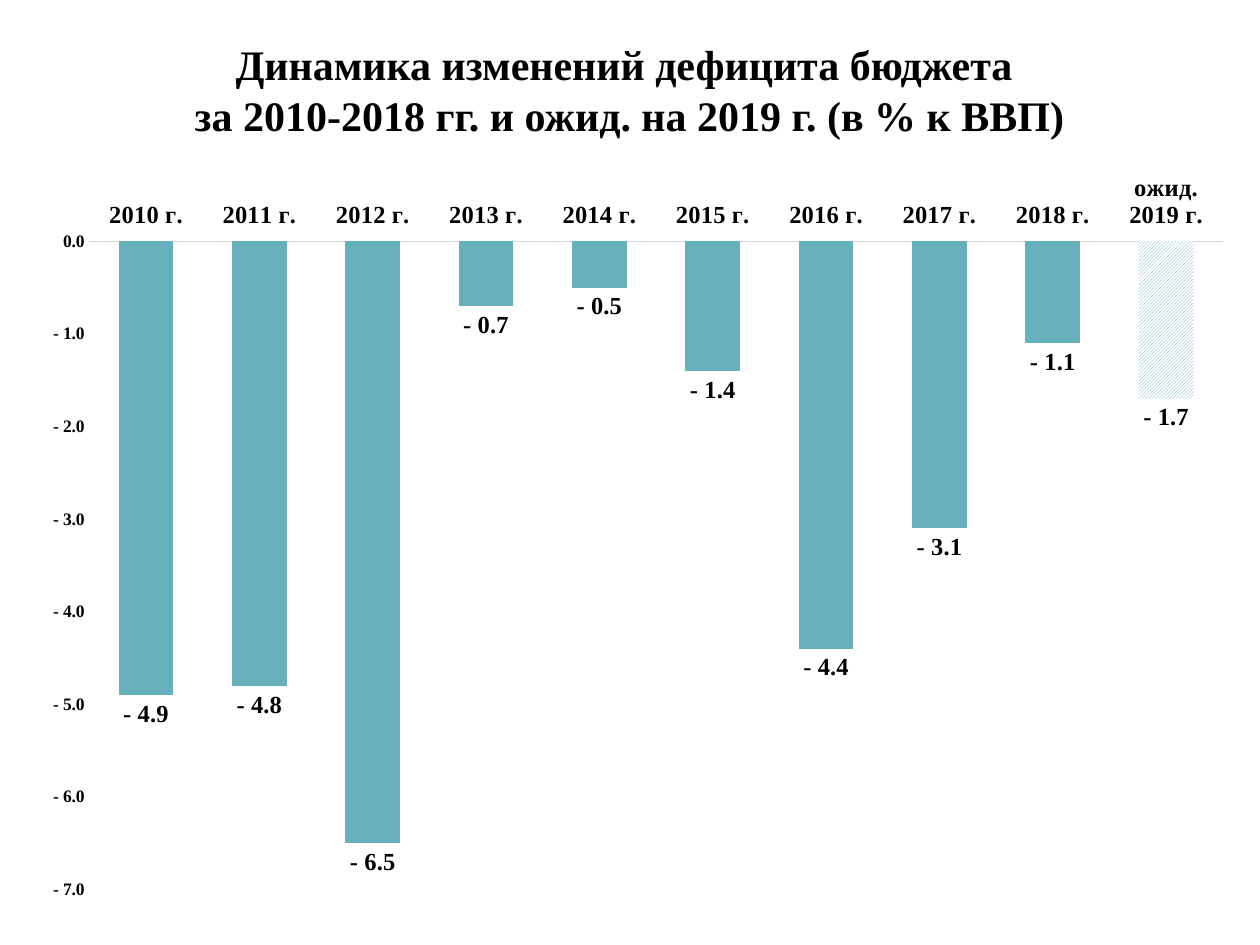
from dataclasses import dataclass

from lxml import etree
from pptx import Presentation
from pptx.chart.data import CategoryChartData
from pptx.dml.color import RGBColor
from pptx.enum.chart import XL_CHART_TYPE, XL_LABEL_POSITION, XL_TICK_LABEL_POSITION, XL_TICK_MARK
from pptx.enum.dml import MSO_PATTERN
from pptx.enum.text import MSO_ANCHOR, MSO_AUTO_SIZE, PP_ALIGN
from pptx.oxml.ns import qn
from pptx.util import Inches, Pt


@dataclass(frozen=True)
class Theme:
    font: str = "Times New Roman"
    text: RGBColor = RGBColor(0, 0, 0)
    bar: RGBColor = RGBColor(0x66, 0xB1, 0xBD)
    background: RGBColor = RGBColor(255, 255, 255)
    axis: RGBColor = RGBColor(0xD9, 0xD9, 0xD9)
    title_size: float = 24
    title_line: float = 29.2
    label_size: float = 14
    scale_size: float = 10
    number_format: str = r"#\ ##0.0"


@dataclass(frozen=True)
class Deficit:
    year: str
    percent: float
    expected: bool = False


THEME = Theme()
TITLE = ["Динамика изменений дефицита бюджета ",
         "за 2010-2018 гг. и ожид. на 2019 г. (в % к ВВП)"]
DEFICITS = [
    Deficit("2010 г.", -4.9), Deficit("2011 г.", -4.8), Deficit("2012 г.", -6.5),
    Deficit("2013 г.", -0.7), Deficit("2014 г.", -0.5), Deficit("2015 г.", -1.4),
    Deficit("2016 г.", -4.4), Deficit("2017 г.", -3.1), Deficit("2018 г.", -1.1),
    Deficit("ожид. 2019 г.", -1.7, expected=True),
]


def style_font(font, size: float) -> None:
    font.name, font.size, font.bold = THEME.font, Pt(size), True
    font.color.rgb = THEME.text


def write_text(text_frame, lines: list[str], *, size: float, line_height: float,
               alignment=PP_ALIGN.CENTER) -> None:
    text_frame.text = "\n".join(lines)
    for paragraph in text_frame.paragraphs:
        paragraph.alignment = alignment
        paragraph.space_before = Pt(0)
        paragraph.line_spacing = Pt(line_height)
        for run in paragraph.runs:
            style_font(run.font, size)


def add_title(slide) -> None:
    title = slide.shapes.title
    title.left, title.top = Inches(0.33), Inches(0.25)
    title.width, title.height = Inches(9.33), Inches(0.91)
    text_frame = title.text_frame
    write_text(text_frame, TITLE, size=THEME.title_size, line_height=THEME.title_line)
    text_frame.word_wrap = True
    text_frame.auto_size = MSO_AUTO_SIZE.NONE
    text_frame.vertical_anchor = MSO_ANCHOR.TOP


def set_plot_area(chart, **position: float) -> None:
    """Place the inner plot area by fractions of the chart."""
    plot_area = chart._chartSpace.chart.plotArea
    for old_layout in plot_area.findall(qn("c:layout")):
        plot_area.remove(old_layout)
    layout = etree.Element(qn("c:layout"))
    plot_area.insert(0, layout)
    manual = etree.SubElement(layout, qn("c:manualLayout"))
    settings = {"layoutTarget": "inner", "xMode": "edge", "yMode": "edge", **position}
    for name, value in settings.items():
        etree.SubElement(manual, qn(f"c:{name}")).set("val", str(value))


def style_axis(axis, size: float) -> None:
    axis.has_major_gridlines = False
    axis.major_tick_mark = axis.minor_tick_mark = XL_TICK_MARK.NONE
    style_font(axis.tick_labels.font, size)


def add_deficit_chart(slide) -> None:
    data = CategoryChartData(number_format=THEME.number_format)
    data.categories = [deficit.year for deficit in DEFICITS]
    data.add_series("Series 1", [deficit.percent for deficit in DEFICITS])
    chart = slide.shapes.add_chart(
        XL_CHART_TYPE.COLUMN_CLUSTERED, Inches(0.25), Inches(1.16),
        Inches(9.58), Inches(6.09), data).chart
    chart.has_legend = chart.has_title = False
    style_font(chart.font, THEME.label_size)
    set_plot_area(chart, x=0.048, y=0.124, w=0.939, h=0.845)

    # Axes: years above the zero line, scale on the left
    years, scale = chart.category_axis, chart.value_axis
    style_axis(years, THEME.label_size)
    years.tick_label_position = XL_TICK_LABEL_POSITION.HIGH
    years.format.line.color.rgb = THEME.axis
    years.format.line.width = Pt(0.75)
    style_axis(scale, THEME.scale_size)
    scale.minimum_scale, scale.maximum_scale, scale.major_unit = -7, 0, 1
    scale.format.line.fill.background()
    scale.tick_labels.number_format = THEME.number_format
    scale.tick_labels.number_format_is_linked = False

    # Columns, hatched where the value is expected
    plot = chart.plots[0]
    plot.gap_width, plot.overlap, plot.vary_by_categories = 107, -27, False
    series = plot.series[0]
    series.invert_if_negative = False
    series.format.fill.solid()
    series.format.fill.fore_color.rgb = THEME.bar
    for index, deficit in enumerate(DEFICITS):
        if deficit.expected:
            fill = series.points[index].format.fill
            fill.patterned()
            fill.pattern = MSO_PATTERN.DARK_UPWARD_DIAGONAL
            fill.fore_color.rgb = THEME.bar
            fill.back_color.rgb = THEME.background

    # Value labels
    labels = series.data_labels
    labels.show_value = True
    labels.position = XL_LABEL_POSITION.OUTSIDE_END
    labels.number_format = THEME.number_format
    labels.number_format_is_linked = False
    style_font(labels.font, THEME.label_size)


def main() -> None:
    presentation = Presentation()
    presentation.slide_width, presentation.slide_height = Inches(10), Inches(7.5)
    slide = presentation.slides.add_slide(presentation.slide_layouts.get_by_name("Title Only"))
    add_title(slide)
    add_deficit_chart(slide)
    presentation.save("out.pptx")


if __name__ == "__main__":
    main()
